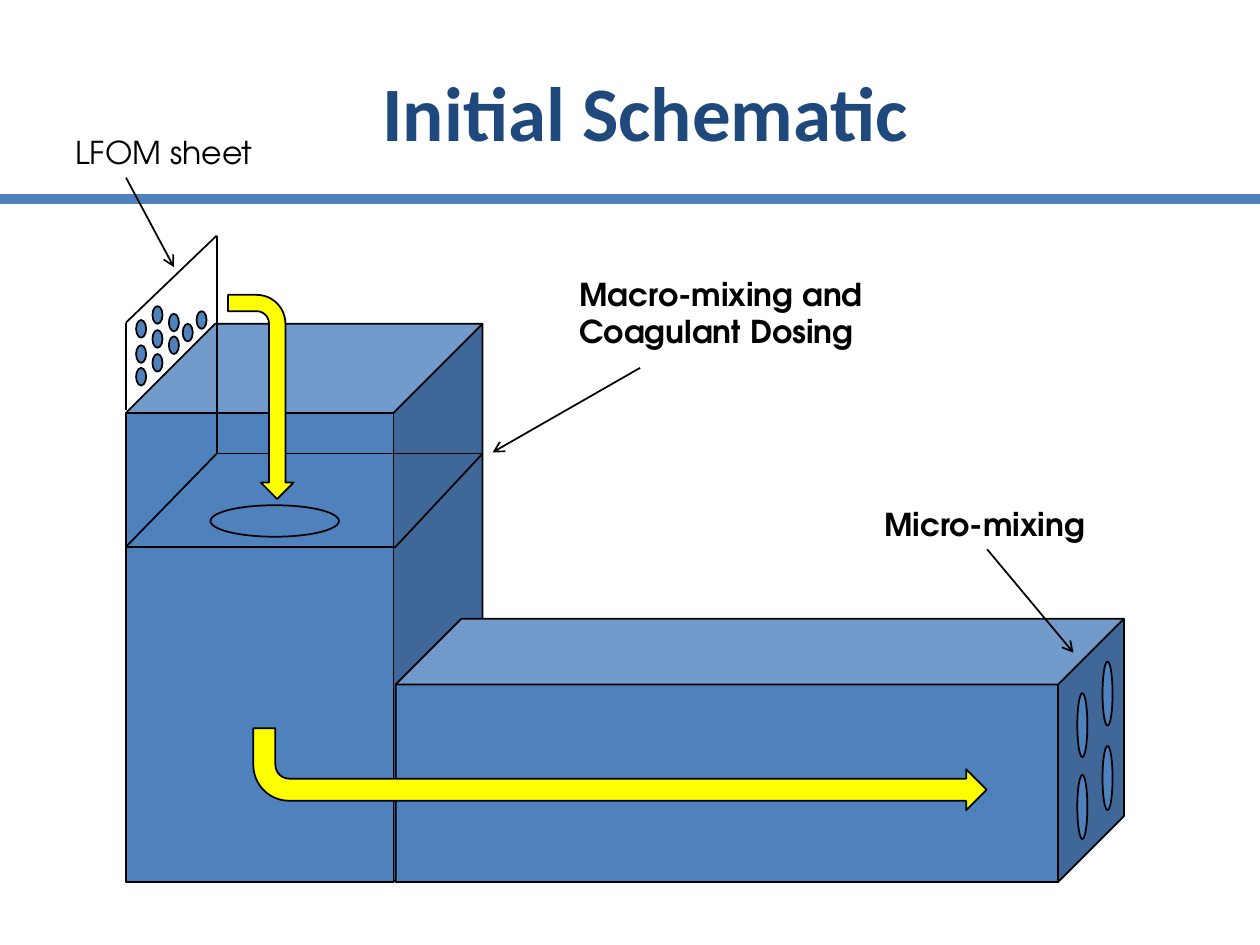
from pptx import Presentation
from pptx.dml.color import RGBColor
from pptx.enum.shapes import MSO_CONNECTOR as Link, MSO_SHAPE as Form
from pptx.enum.text import MSO_ANCHOR as Anchor, MSO_AUTO_SIZE as Fit, PP_ALIGN as Align
from pptx.oxml.ns import qn
from pptx.util import Inches, Pt
from lxml.etree import SubElement

COL = ROW = Inches(1)
BLUE, NAVY, GOLD, INK = "4F81BD", "1F497D", "FFFF00", "000000"


def tint(code):
    """Turn a hex string into a colour."""
    return RGBColor.from_string(code)


def grid(x, y, wide, high):
    """Turn columns and rows into a frame."""
    return [round(n * unit) for n, unit in zip((x, y, wide, high), (COL, ROW, COL, ROW))]


def solid(slide, form, box, fill=BLUE):
    """Add a filled shape with a thin black outline."""
    shape = slide.shapes.add_shape(form, *grid(*box))
    shape.shadow.inherit = False
    shape.fill.solid()
    shape.fill.fore_color.rgb = tint(fill)
    shape.line.color.rgb = tint(INK)
    shape.line.width = Pt(1)
    return shape


def ovals(slide, spots, wide, high):
    """Add equal ellipses at the given corners."""
    for x, y in spots:
        solid(slide, Form.OVAL, (x, y, wide, high))


def stroke(slide, start, end, color=INK, width=1, arrow=False):
    """Add a straight line, with an open arrowhead if asked."""
    line = slide.shapes.add_connector(Link.STRAIGHT, *grid(*start, *end))
    line.line.color.rgb = tint(color)
    line.line.width = Pt(width)
    if arrow:
        SubElement(line.line._get_or_add_ln(), qn("a:tailEnd"), type="arrow")
    SubElement(line.element.spPr, qn("a:effectLst"))
    return line


def label(slide, text, box, bold=True):
    """Add a caption."""
    shape = slide.shapes.add_textbox(*grid(*box))
    frame = shape.text_frame
    frame.word_wrap = True
    frame.auto_size = Fit.SHAPE_TO_FIT_TEXT
    frame.text = text
    font = frame.paragraphs[0].font
    font.name, font.size, font.bold = "TeX Gyre Adventor", Pt(18), bold
    font.color.rgb = tint(INK)
    return shape


def head(slide, text):
    """Fill and place the title."""
    title = slide.shapes.title
    title.left, title.top, title.width, title.height = grid(0.5, 0.25, 9.25, 1.25)
    title.text_frame.text = text
    title.text_frame.vertical_anchor = Anchor.MIDDLE
    para = title.text_frame.paragraphs[0]
    para.alignment = Align.CENTER
    para.font.name, para.font.size, para.font.bold = "Calibri", Pt(44), True
    para.font.color.rgb = tint(NAVY)


def tanks(slide):
    """Draw both tanks, the water level and the inlet sheet."""
    solid(slide, Form.CUBE, (1, 2.57, 2.83, 4.43))
    solid(slide, Form.CUBE, (3.14, 4.91, 5.78, 2.09))
    level = [(1, 4.34), (3.14, 4.34), (3.83, 3.6), (1.72, 3.6), (1, 4.34)]
    sheet = [(1, 3.25), (1, 2.56), (1.72, 1.87), (1.72, 3.6)]
    for path in (level, sheet):
        for start, end in zip(path, path[1:]):
            stroke(slide, start, end)


def holes(slide):
    """Draw the openings in the sheet, the floor and the outlet."""
    rows = {1.08: (2.54, 2.74, 2.92), 1.21: (2.43, 2.62, 2.81),
            1.34: (2.49, 2.67), 1.45: (2.57,), 1.56: (2.47,)}
    ovals(slide, [(x, y) for x, tops in rows.items() for y in tops], 0.08, 0.14)
    ovals(slide, [(1.67, 4.01)], 1.02, 0.25)
    ovals(slide, [(8.75, 5.25), (8.75, 5.92), (8.55, 5.5), (8.55, 6.15)], 0.08, 0.51)


def notes(slide):
    """Add the captions and their pointers."""
    label(slide, "LFOM sheet", (0.5, 1.01, 2.33, 0.4), bold=False)
    label(slide, "Macro-mixing and Coagulant Dosing", (4.5, 2.13, 2.58, 0.71))
    micro = label(slide, "Micro-mixing", (6.92, 3.96, 1.83, 0.4))
    stroke(slide, (1, 1.41), (1.38, 2.12), arrow=True)
    stroke(slide, (5.08, 2.92), (3.91, 3.59), arrow=True)
    stroke(slide, (7.83, 4.37), (8.52, 5.18), arrow=True).begin_connect(micro, 2)


def flow(slide):
    """Add the bent arrows for the water's path."""
    down = solid(slide, Form.BENT_ARROW, (1.26, 2.89, 1.62, 0.52), GOLD)
    down.rotation = 90
    out = solid(slide, Form.BENT_ARROW, (2.01, 5.78, 5.82, 0.65), GOLD)
    out.rotation = 180
    out.element.spPr.get_or_add_xfrm().set("flipH", "1")
    out.adjustments[0] = 0.27


def main():
    """Build and save the slide."""
    deck = Presentation()
    deck.slide_width, deck.slide_height = 10 * COL, round(7.5 * ROW)
    slide = deck.slides.add_slide(deck.slide_layouts[5])
    stroke(slide, (0, 1.58), (10, 1.58), BLUE, 6)
    head(slide, "Initial Schematic")
    tanks(slide)
    holes(slide)
    notes(slide)
    flow(slide)
    deck.save("out.pptx")


if __name__ == "__main__":
    main()
